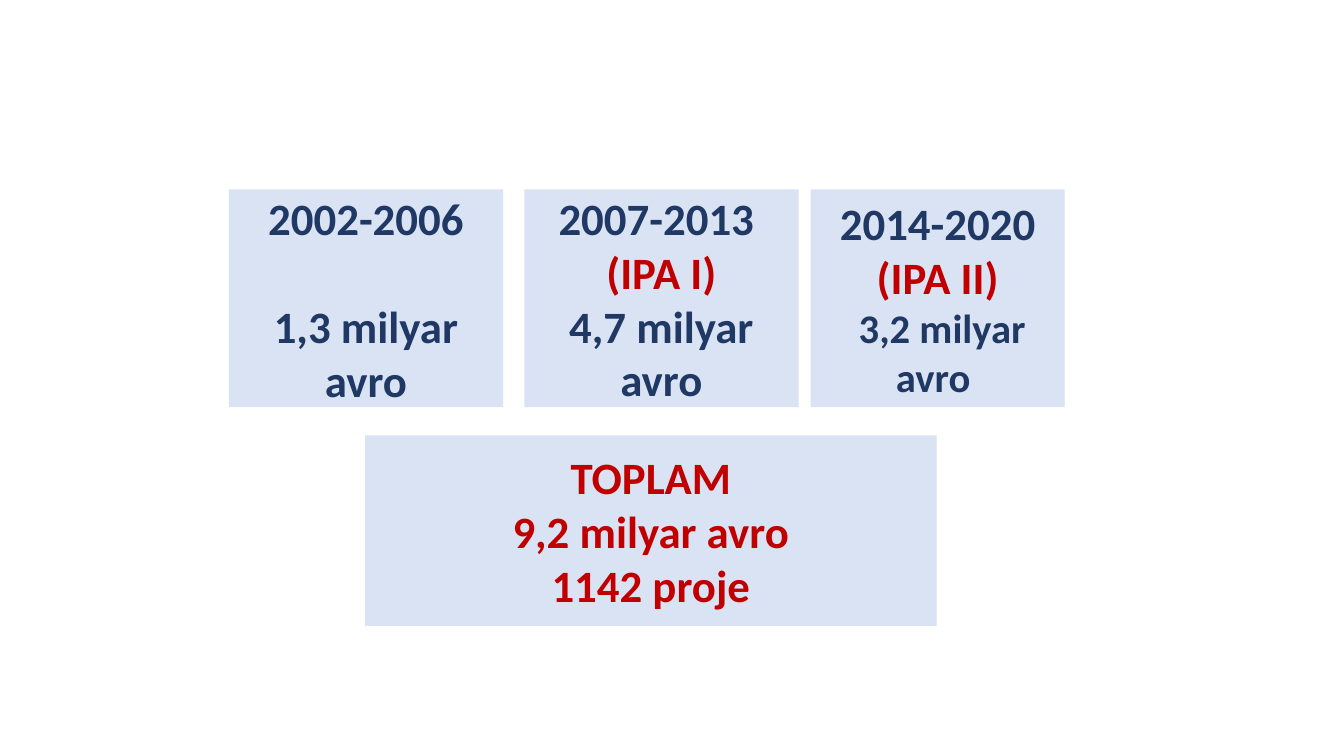
from dataclasses import dataclass

from pptx import Presentation
from pptx.dml.color import RGBColor
from pptx.enum.shapes import MSO_SHAPE
from pptx.enum.text import MSO_ANCHOR, PP_ALIGN
from pptx.util import Inches, Pt

RECTANGLE = MSO_SHAPE.RECTANGLE
MIDDLE = MSO_ANCHOR.MIDDLE
CENTER = PP_ALIGN.CENTER

SLIDE_WIDTH = Inches(13.33)
SLIDE_HEIGHT = Inches(7.5)
NAVY = "203864"
RED = "C00000"
PALE_BLUE = "DAE3F3"
PERIOD_TOP, PERIOD_HEIGHT = 25.07, 28.8
SKIPPED_LINE = 39


@dataclass(frozen=True)
class Line:
    text: str
    color: str = NAVY
    size: float = 32
    space_before: float = 0


@dataclass(frozen=True)
class Card:
    """Position and size are percentages of the slide's width and height."""
    left: float
    width: float
    lines: tuple[Line, ...]
    top: float = PERIOD_TOP
    height: float = PERIOD_HEIGHT
    inset: float = 0.25


CARDS = (
    Card(27.16, 42.54, (
        Line("TOPLAM", RED),
        Line("9,2 milyar avro", RED),
        Line("1142 proje", RED),
    ), top=57.6, height=25.2, inset=0.1),
    Card(17.03, 20.41, (
        Line("2002-2006"),
        Line("1,3 milyar avro", space_before=SKIPPED_LINE),
    )),
    Card(39.01, 20.41, (
        Line("2007-2013 "),
        Line("(IPA I)", RED),
        Line("4,7 milyar avro"),
    )),
    Card(60.32, 18.9, (
        Line("2014-2020"),
        Line("(IPA II)", RED),
        Line(" 3,2 milyar avro ", size=29),
    )),
)


def rgb(color: str) -> RGBColor:
    return RGBColor.from_string(color)


def write_line(paragraph, text: str, *, color: str, size: float, space_before: float) -> None:
    paragraph.alignment = CENTER
    if space_before:
        paragraph.space_before = Pt(space_before)
    run = paragraph.add_run()
    run.text = text
    run.font.name = "Calibri"
    run.font.size = Pt(size)
    run.font.bold = True
    run.font.color.rgb = rgb(color)


def draw_card(slide, card: Card) -> None:
    shape = slide.shapes.add_shape(
        RECTANGLE,
        round(SLIDE_WIDTH * card.left / 100),
        round(SLIDE_HEIGHT * card.top / 100),
        round(SLIDE_WIDTH * card.width / 100),
        round(SLIDE_HEIGHT * card.height / 100),
    )
    shape.shadow.inherit = False
    shape.fill.solid()
    shape.fill.fore_color.rgb = rgb(PALE_BLUE)
    shape.line.fill.background()

    frame = shape.text_frame
    frame.word_wrap = True
    frame.vertical_anchor = MIDDLE
    frame.margin_left = frame.margin_right = Inches(card.inset)
    frame.margin_top = frame.margin_bottom = Inches(card.inset)
    for index, line in enumerate(card.lines):
        paragraph = frame.add_paragraph() if index else frame.paragraphs[0]
        write_line(paragraph, line.text, color=line.color, size=line.size,
                   space_before=line.space_before)


def main() -> None:
    presentation = Presentation()
    presentation.slide_width = SLIDE_WIDTH
    presentation.slide_height = SLIDE_HEIGHT
    slide = presentation.slides.add_slide(presentation.slide_layouts[6])
    for card in CARDS:
        draw_card(slide, card)
    presentation.save("out.pptx")


if __name__ == "__main__":
    main()
